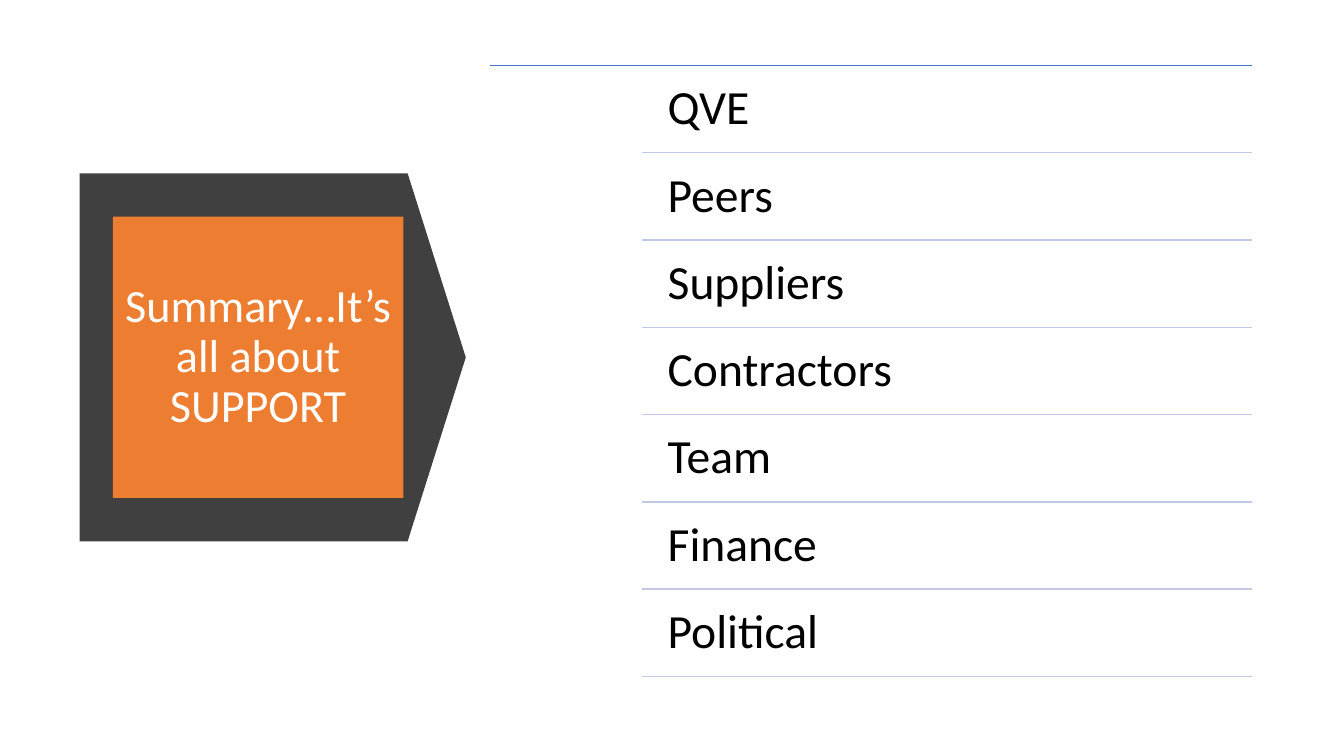
from lxml import etree
from pptx import Presentation
from pptx.dml.color import RGBColor
from pptx.enum.shapes import MSO_CONNECTOR, MSO_SHAPE
from pptx.enum.text import MSO_ANCHOR, PP_ALIGN
from pptx.oxml.ns import qn
from pptx.util import Inches, Pt

STRAIGHT = MSO_CONNECTOR.STRAIGHT
DOWN_ARROW = MSO_SHAPE.DOWN_ARROW
RECTANGLE = MSO_SHAPE.RECTANGLE
MIDDLE = MSO_ANCHOR.MIDDLE
TOP = MSO_ANCHOR.TOP
CENTER = PP_ALIGN.CENTER
LEFT = PP_ALIGN.LEFT

CHARCOAL = RGBColor(0x40, 0x40, 0x40)
ORANGE = RGBColor(0xED, 0x7D, 0x31)
BLUE = RGBColor(0x44, 0x72, 0xC4)
PALE_BLUE = RGBColor(0xC1, 0xC9, 0xE4)
WHITE = RGBColor(0xFF, 0xFF, 0xFF)
BLACK = RGBColor(0x00, 0x00, 0x00)

TITLE = "Summary…It’s all about SUPPORT"
SUPPORTERS = ["QVE", "Peers", "Suppliers", "Contractors", "Team", "Finance", "Political"]


def add_filled_shape(slide, kind, left, top, width, height, color):
    shape = slide.shapes.add_shape(
        kind, Inches(left), Inches(top), Inches(width), Inches(height))
    shape.shadow.inherit = False
    shape.fill.solid()
    shape.fill.fore_color.rgb = color
    shape.line.fill.background()
    return shape


def add_rule(slide, left, right, y, color):
    rule = slide.shapes.add_connector(
        STRAIGHT, Inches(left), Inches(y), Inches(right), Inches(y))
    rule.line.color.rgb = color
    rule.line.width = Pt(1)
    etree.SubElement(rule.element.spPr, qn("a:effectLst"))


def write_text(shape, text, size, color, align, anchor, margin_x, margin_y):
    frame = shape.text_frame
    frame.word_wrap = True
    frame.vertical_anchor = anchor
    frame.margin_left = frame.margin_right = Inches(margin_x)
    frame.margin_top = frame.margin_bottom = Inches(margin_y)
    paragraph = frame.paragraphs[0]
    paragraph.text = text
    paragraph.alignment = align
    paragraph.line_spacing = 0.9
    paragraph.font.name = "Calibri"
    paragraph.font.size = Pt(size)
    paragraph.font.color.rgb = color


def add_title_arrow(slide, left, top, width, height):
    """Arrow pointing right, with the title panel inside it."""
    # The down arrow is turned, so its own width is the height on the slide.
    arrow = add_filled_shape(
        slide, DOWN_ARROW, left + (width - height) / 2, top + (height - width) / 2,
        height, width, CHARCOAL)
    arrow.rotation = 270
    arrow.adjustments[0] = 1
    arrow.adjustments[1] = 0.158
    panel = add_filled_shape(
        slide, RECTANGLE, left + 0.33, top + 0.43, 2.88, 2.79, ORANGE)
    write_text(panel, TITLE, 33, WHITE, CENTER, MIDDLE, 0.08, 0.05)


def add_supporter_list(slide, left, top, width, height):
    right = left + width
    row_height = height / len(SUPPORTERS)
    indent = width / 5
    text_left = left + indent + 0.11
    add_rule(slide, left, right, top, BLUE)
    for row, supporter in enumerate(SUPPORTERS):
        row_top = top + row * row_height
        label = slide.shapes.add_textbox(
            Inches(text_left), Inches(row_top + 0.04),
            Inches(right - text_left), Inches(row_height - 0.05))
        write_text(label, supporter, 34, BLACK, LEFT, TOP, 0.14, 0.14)
        add_rule(slide, left + indent, right, row_top + row_height, PALE_BLUE)


def main():
    presentation = Presentation()
    presentation.slide_width = Inches(13.33)
    presentation.slide_height = Inches(7.5)
    slide = presentation.slides.add_slide(presentation.slide_layouts[6])
    add_title_arrow(slide, 0.79, 1.72, 3.83, 3.65)
    add_supporter_list(slide, 4.86, 0.65, 7.56, 6.06)
    presentation.save("out.pptx")


if __name__ == "__main__":
    main()
